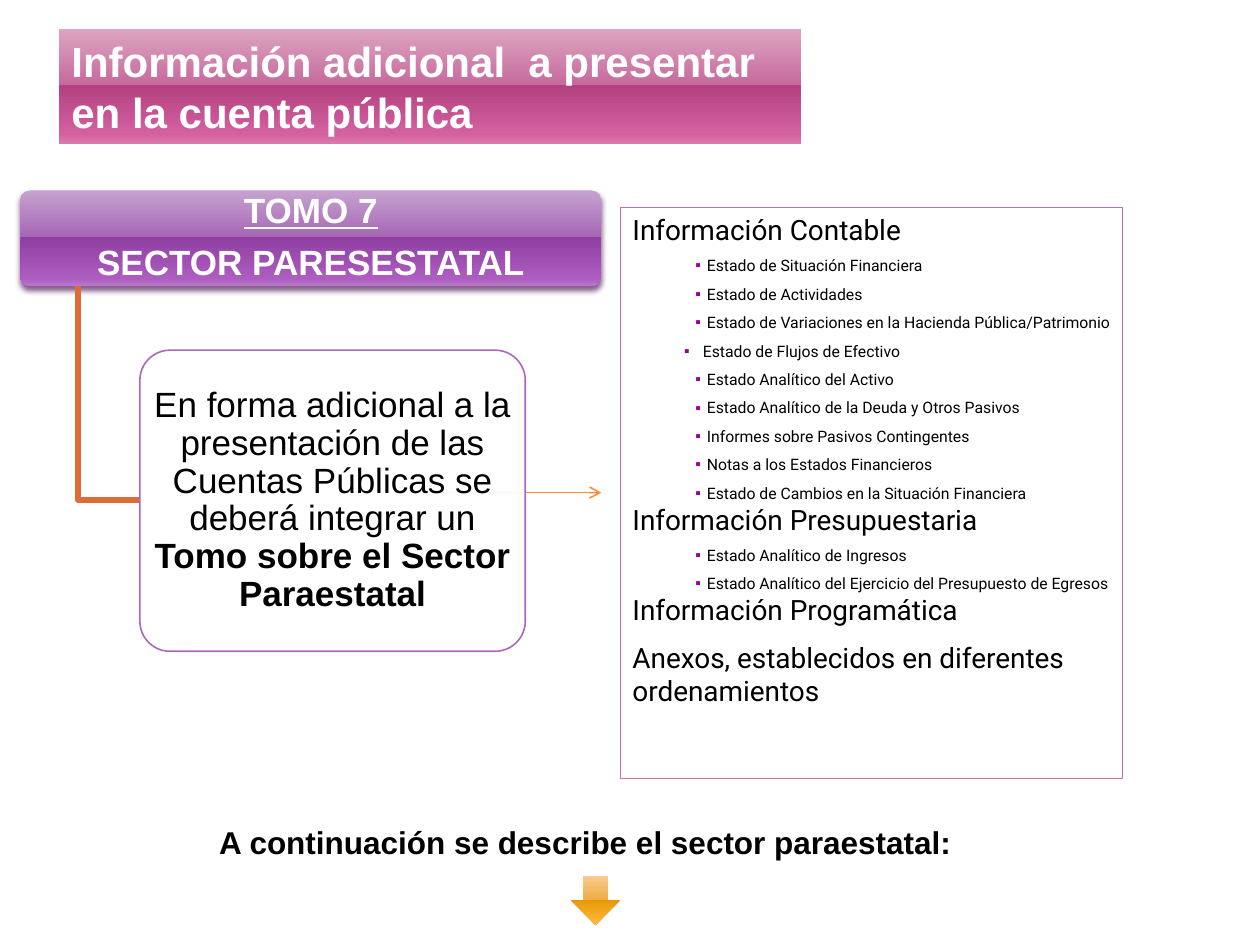
from lxml.etree import SubElement
from pptx import Presentation
from pptx.dml.color import RGBColor
from pptx.enum.shapes import MSO_CONNECTOR as CONN, MSO_SHAPE as SHAPE
from pptx.enum.text import MSO_ANCHOR as ANCHOR, PP_ALIGN as ALIGN
from pptx.oxml.ns import qn
from pptx.util import Cm, Pt

WHITE = RGBColor(0xFF, 0xFF, 0xFF)
BLACK = RGBColor(0x00, 0x00, 0x00)
ORANGE = RGBColor(0xFA, 0x8D, 0x3D)
RUST = RGBColor(0xDE, 0x6C, 0x36)
PURPLE = RGBColor(0xAC, 0x66, 0xBB)
PINK = RGBColor(0xCF, 0x6D, 0xA4)
BULLET = RGBColor(0x99, 0x00, 0x99)
SHADOW = RGBColor(0x6A, 0x3F, 0x73)

STOPS = (0, 49, 49, 92, 100)
PURPLES = ("C6A2D0", "A666B4", "8F3EA1", "AD5DBF", "BA76CA")
PINKS = ("DDA4C1", "C66B9D", "B34181", "D361A0", "DC79AE")
AMBERS = ("FBCC93", "EFAE43", "E59807", "FFB432", "FFBE5F")

HEADER_BOX = (0.41, 3.84, 11.71, 1.93)
CARD_BOX = (2.82, 7.06, 7.77, 6.07)

HEADING = {"size": Pt(16), "name": "Roboto"}
ITEM = {"size": Pt(9), "name": "Roboto"}
HEADER = {"size": Pt(20), "name": "Arial", "bold": True}
CARD = {"size": Pt(20), "name": "Arial"}
TITLE = {"size": Pt(24), "name": "Arial", "bold": True}
CLOSING = {"size": Pt(18), "name": "Arial", "bold": True}

FLOWS = "Estado de Flujos de Efectivo"
SECTIONS = [
    ("Información Contable", [
        "Estado de Situación Financiera",
        "Estado de Actividades",
        "Estado de Variaciones en la Hacienda Pública/Patrimonio",
        FLOWS,
        "Estado Analítico del Activo",
        "Estado Analítico de la Deuda y Otros Pasivos",
        "Informes sobre Pasivos Contingentes",
        "Notas a los Estados Financieros",
        "Estado de Cambios en la Situación Financiera",
    ]),
    ("Información Presupuestaria", [
        "Estado Analítico de Ingresos",
        "Estado Analítico del Ejercicio del Presupuesto de Egresos",
    ]),
    ("Información Programática", []),
    ("Anexos, establecidos en diferentes ordenamientos", []),
]


def add_child(parent, tag, **attrs):
    return SubElement(parent, qn(tag), {k: str(v) for k, v in attrs.items()})


def add_box(s, kind, box, fill=None, line=None, width=0):
    sp = s.shapes.add_shape(kind, *map(Cm, box))
    sp.shadow.inherit = False
    if fill is not None:
        sp.fill.solid()
        sp.fill.fore_color.rgb = fill
    if line is None:
        sp.line.fill.background()
    else:
        sp.line.color.rgb = line
        sp.line.width = Pt(width)
    return sp


def set_gradient(sp, colors):
    sp.fill.gradient()
    sp.fill.gradient_angle = 270
    stops = sp.element.spPr.find(qn("a:gradFill")).find(qn("a:gsLst"))
    for old in list(stops):
        stops.remove(old)
    for pos, color in zip(STOPS, colors):
        stop = add_child(stops, "a:gs", pos=pos * 1000)
        add_child(stop, "a:srgbClr", val=color)


def set_shadow(sp, color):
    effects = sp.element.spPr.find(qn("a:effectLst"))
    shadow = add_child(effects, "a:outerShdw", blurRad=Pt(3.1), dist=Pt(2),
                       dir=5400000, algn="ctr", rotWithShape=0)
    add_child(add_child(shadow, "a:srgbClr", val=color), "a:alpha", val=83000)


def add_run(p, text, fmt, color):
    r = p.add_run()
    r.text = text
    for name, value in fmt.items():
        setattr(r.font, name, value)
    r.font.color.rgb = color
    return r


def set_bullet(p, left, hang):
    pPr = p._p.get_or_add_pPr()
    pPr.set("marL", str(Cm(left)))
    pPr.set("indent", str(-Cm(hang)))
    add_child(add_child(pPr, "a:buClr"), "a:srgbClr", val=BULLET)
    add_child(pPr, "a:buFont", typeface="Arial")
    add_child(pPr, "a:buChar", char="▪")


def add_label(s, box, paragraphs, color):
    tf = s.shapes.add_textbox(*map(Cm, box)).text_frame
    layout = {"word_wrap": True, "vertical_anchor": ANCHOR.MIDDLE,
              "margin_left": Cm(0.1), "margin_right": Cm(0.1),
              "margin_top": Cm(0.08), "margin_bottom": Cm(0.08)}
    for name, value in layout.items():
        setattr(tf, name, value)
    for i, runs in enumerate(paragraphs):
        p = tf.add_paragraph() if i else tf.paragraphs[0]
        p.alignment = ALIGN.CENTER
        p.line_spacing = 0.9
        p.space_after = Pt(8)
        for text, fmt in runs:
            add_run(p, text, fmt, color)


def add_arrow(s, x1, x2, y):
    cn = s.shapes.add_connector(CONN.STRAIGHT, Cm(x1), Cm(y), Cm(x2), Cm(y))
    cn.line.color.rgb = ORANGE
    cn.line.width = Pt(0.9)
    add_child(cn.line._get_or_add_ln(), "a:tailEnd", type="arrow")
    add_child(cn._element.spPr, "a:effectLst")


def add_elbow(s, points):
    points = [(Cm(x), Cm(y)) for x, y in points]
    fb = s.shapes.build_freeform(*points[0])
    fb.add_line_segments(points[1:], close=False)
    sp = fb.convert_to_shape()
    sp.shadow.inherit = False
    sp.fill.background()
    sp.line.color.rgb = RUST
    sp.line.width = Pt(3.15)


def add_panel(s, box):
    sp = add_box(s, SHAPE.RECTANGLE, box, WHITE, PINK, 0.25)
    tf = sp.text_frame
    tf.word_wrap = True
    tf.vertical_anchor = ANCHOR.TOP
    p = tf.paragraphs[0]
    for i, (heading, items) in enumerate(SECTIONS):
        if i:
            p = tf.add_paragraph()
        p.alignment = ALIGN.LEFT
        add_run(p, heading, HEADING, BLACK)
        for item in items:
            p = tf.add_paragraph()
            p.level = 1
            p.alignment = ALIGN.LEFT
            p.line_spacing = 1.5
            set_bullet(p, *((1.42, 0.38) if item == FLOWS else (1.5, 0.23)))
            add_run(p, item, ITEM, BLACK)
    p.space_before = Pt(8)


def add_title(s, box, text):
    sp = add_box(s, SHAPE.RECTANGLE, box)
    set_gradient(sp, PINKS)
    sp.text_frame.word_wrap = True
    p = sp.text_frame.paragraphs[0]
    p.alignment = ALIGN.LEFT
    add_run(p, text, TITLE, WHITE)


def main():
    prs = Presentation()
    prs.slide_width, prs.slide_height = Cm(25.4), Cm(19.05)
    s = prs.slides.add_slide(prs.slide_layouts[6])

    add_arrow(s, 8.74, 12.12, 9.93)

    header = add_box(s, SHAPE.ROUNDED_RECTANGLE, HEADER_BOX)
    header.adjustments[0] = 0.1
    set_gradient(header, PURPLES)
    set_shadow(header, SHADOW)
    add_label(s, HEADER_BOX, [[("TOMO 7", HEADER | {"underline": True})],
                              [("SECTOR PARESESTATAL", HEADER)]], WHITE)

    add_elbow(s, [(1.57, 5.77), (1.57, 10.08), (2.82, 10.08)])

    card = add_box(s, SHAPE.ROUNDED_RECTANGLE, CARD_BOX, WHITE, PURPLE, 0.9)
    card.adjustments[0] = 0.1
    fill = card.element.spPr.find(qn("a:solidFill"))
    add_child(fill[0], "a:alpha", val=90000)
    add_label(s, CARD_BOX, [[
        ("En forma adicional a la presentación de las Cuentas Públicas "
         "se deberá integrar un ", CARD),
        ("Tomo sobre el Sector Paraestatal", CARD | {"bold": True})]], BLACK)

    add_panel(s, (12.5, 4.17, 10.12, 11.53))
    add_title(s, (1.19, 0.58, 14.96, 2.31),
              "Información adicional  a presentar en la cuenta pública")

    closing = s.shapes.add_textbox(Cm(4.17), Cm(16.46), Cm(15.42), Cm(1.02))
    add_run(closing.text_frame.paragraphs[0],
            "A continuación se describe el sector paraestatal:", CLOSING, BLACK)

    down = add_box(s, SHAPE.DOWN_ARROW, (11.51, 17.65, 0.99, 0.99))
    set_gradient(down, AMBERS)
    prs.save("out.pptx")


if __name__ == "__main__":
    main()
